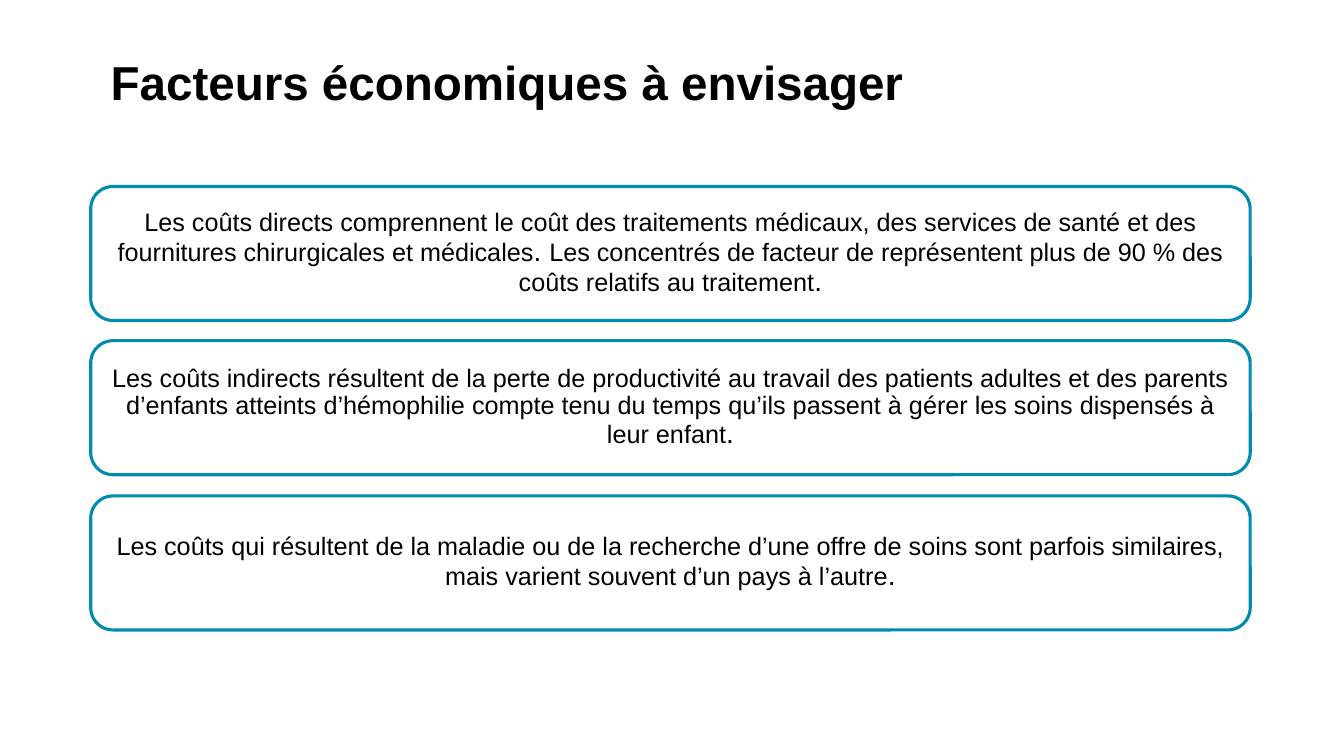
from pptx import Presentation
from pptx.dml.color import RGBColor
from pptx.enum.shapes import MSO_SHAPE
from pptx.enum.text import MSO_ANCHOR, PP_ALIGN
from pptx.util import Pt

ROUNDED = MSO_SHAPE.ROUNDED_RECTANGLE
MIDDLE = MSO_ANCHOR.MIDDLE
LEFT, CENTER = PP_ALIGN.LEFT, PP_ALIGN.CENTER

BLACK = RGBColor(0x00, 0x00, 0x00)
WHITE = RGBColor(0xFF, 0xFF, 0xFF)
TEAL = RGBColor(0x00, 0x8B, 0xB0)

EMU_PER_PX = 9144

TITLE = "Facteurs économiques à envisager"
COSTS = [
    [
        "Les coûts directs comprennent le coût des traitements médicaux, des services "
        "de santé et des fournitures chirurgicales et médicales",
        "Les concentrés de facteur de représentent plus de 90 % des coûts relatifs "
        "au traitement",
    ],
    [
        "Les coûts indirects résultent de la perte de productivité au travail des "
        "patients adultes et des parents d’enfants atteints d’hémophilie compte tenu "
        "du temps qu’ils passent à gérer les soins dispensés à leur enfant",
    ],
    [
        "Les coûts qui résultent de la maladie ou de la recherche d’une offre de soins "
        "sont parfois similaires, mais varient souvent d’un pays à l’autre",
    ],
]


def px(n):
    return n * EMU_PER_PX


class Deck:
    font = "Arial"
    title_size = 34
    body_size = 18
    stop_size = 20
    inset = 8

    def __init__(self, width, height):
        self.prs = Presentation()
        self.prs.slide_width = px(width)
        self.prs.slide_height = px(height)
        self.slide = self.prs.slides.add_slide(self.prs.slide_layouts[6])

    def paragraph(self, tf, align):
        tf.word_wrap = True
        tf.vertical_anchor = MIDDLE
        p = tf.paragraphs[0]
        p.alignment = align
        p.line_spacing = 0.9
        p.font.name = self.font
        p.font.color.rgb = BLACK
        return p

    def title(self, text, *box):
        sp = self.slide.shapes.add_textbox(*map(px, box))
        p = self.paragraph(sp.text_frame, LEFT)
        p.font.size = Pt(self.title_size)
        p.font.bold = True
        p.add_run().text = text

    def card(self, sentences, *box):
        sp = self.slide.shapes.add_shape(ROUNDED, *map(px, box))
        sp.shadow.inherit = False
        sp.fill.solid()
        sp.fill.fore_color.rgb = WHITE
        sp.line.color.rgb = TEAL
        sp.line.width = Pt(2.25)
        tf = sp.text_frame
        tf.margin_left = tf.margin_right = px(self.inset)
        tf.margin_top = tf.margin_bottom = px(self.inset)
        p = self.paragraph(tf, CENTER)
        for i, sentence in enumerate(sentences):
            stop = "." if i == len(sentences) - 1 else ". "
            for text, size in ((sentence, self.body_size), (stop, self.stop_size)):
                r = p.add_run()
                r.text = text
                r.font.size = Pt(size)

    def save(self):
        self.prs.save("out.pptx")


def main():
    deck = Deck(1333, 750)
    deck.title(TITLE, 100, 25, 1150, 119)
    first_top, last_top = 185, 492
    for i, sentences in enumerate(COSTS):
        top = first_top + (last_top - first_top) * i // (len(COSTS) - 1)
        deck.card(sentences, 90, top, 1150, 133)
    deck.save()


if __name__ == "__main__":
    main()
